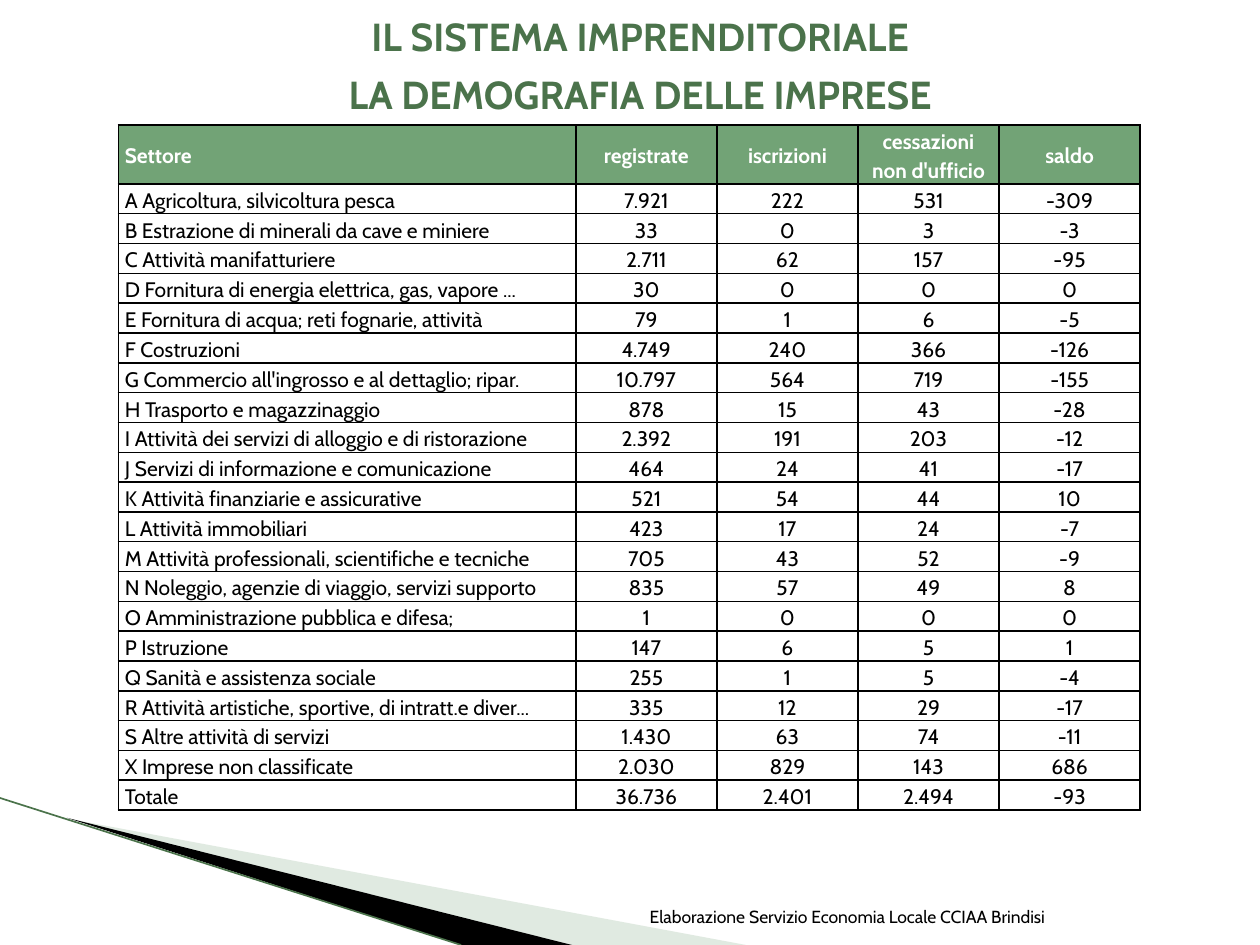
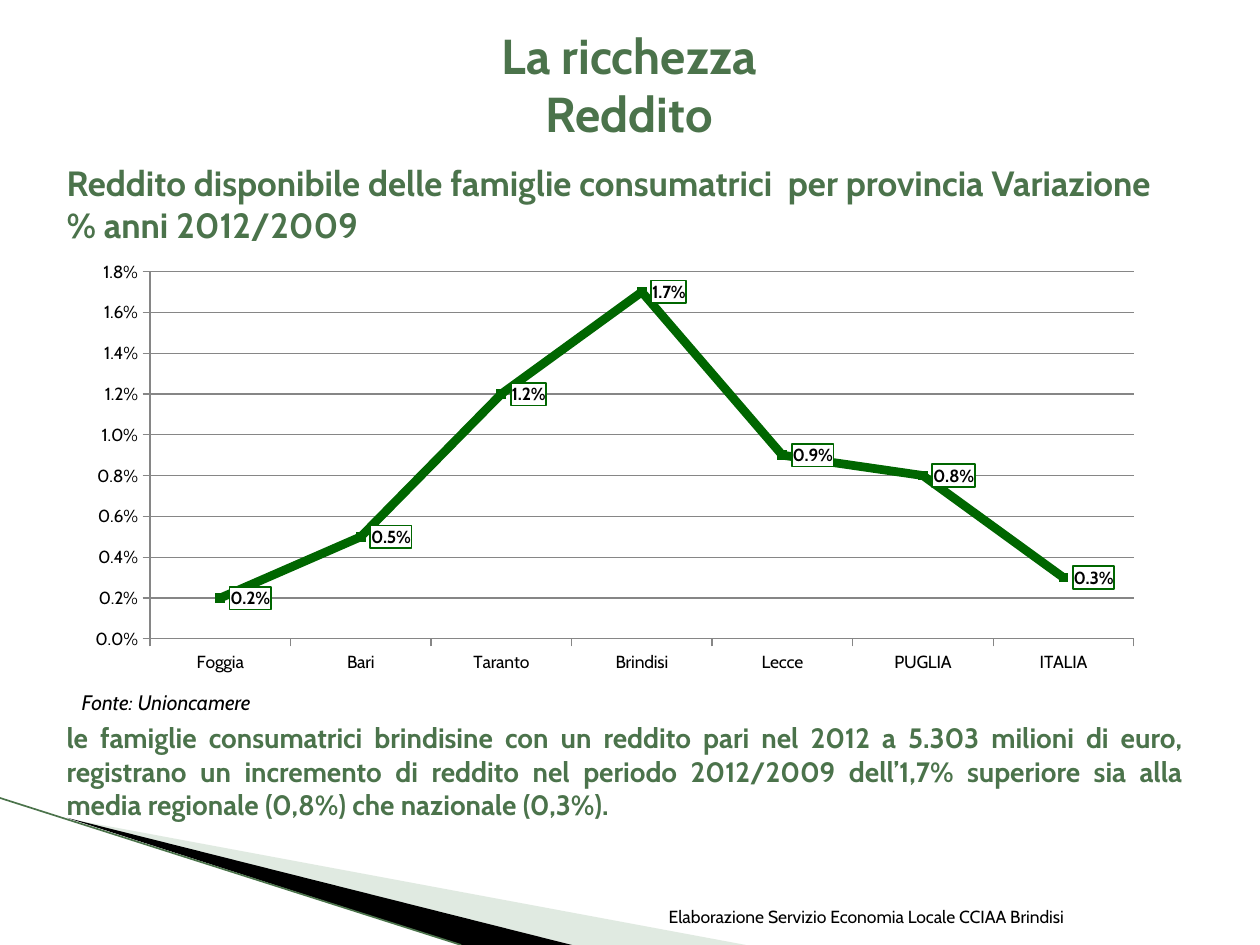
import pptx
import pptx.util
import pptx.chart.data
import pptx.dml.color
import pptx.enum.chart
import pptx.enum.shapes
import pptx.enum.text
import pptx.oxml
import pptx.oxml.ns

Inches = pptx.util.Inches
Pt = pptx.util.Pt
RGBColor = pptx.dml.color.RGBColor
ALIGN = pptx.enum.text.PP_ALIGN
ANCHOR = pptx.enum.text.MSO_ANCHOR

FONT = "Cabin"
GREEN = RGBColor(0x4B, 0x73, 0x4B)
HEAD = RGBColor(0x72, 0xA3, 0x76)
PALE = RGBColor(0xB3, 0xCB, 0xB5)
DEEP = RGBColor(0x00, 0x66, 0x00)
GRAY = RGBColor(0x86, 0x86, 0x86)
BLACK = RGBColor(0, 0, 0)
WHITE = RGBColor(255, 255, 255)

FOOTER = "Elaborazione Servizio Economia Locale CCIAA Brindisi"
FIRMS = "il sistema imprenditoriale\vla demografia delle imprese"
WEALTH = "La ricchezza\vReddito"
INCOME = ("Reddito disponibile delle famiglie consumatrici  per provincia "
          "Variazione % anni 2012/2009")
SOURCE = "Fonte: Unioncamere"
REMARK = ("le famiglie consumatrici brindisine con un reddito pari nel 2012 a 5.303 "
          "milioni di euro, registrano un incremento di reddito nel periodo 2012/2009 "
          "dell’1,7% superiore sia alla media regionale (0,8%) che nazionale (0,3%).")

SECTORS = [
    ("Settore", "registrate", "iscrizioni", "cessazioni non d'ufficio", "saldo"),
    ("A Agricoltura, silvicoltura pesca", "7.921", "222", "531", "-309"),
    ("B Estrazione di minerali da cave e miniere", "33", "0", "3", "-3"),
    ("C Attività manifatturiere", "2.711", "62", "157", "-95"),
    ("D Fornitura di energia elettrica, gas, vapore ...", "30", "0", "0", "0"),
    ("E Fornitura di acqua; reti fognarie, attività", "79", "1", "6", "-5"),
    ("F Costruzioni", "4.749", "240", "366", "-126"),
    ("G Commercio all'ingrosso e al dettaglio; ripar.", "10.797", "564", "719", "-155"),
    ("H Trasporto e magazzinaggio", "878", "15", "43", "-28"),
    ("I Attività dei servizi di alloggio e di ristorazione", "2.392", "191", "203", "-12"),
    ("J Servizi di informazione e comunicazione", "464", "24", "41", "-17"),
    ("K Attività finanziarie e assicurative", "521", "54", "44", "10"),
    ("L Attività immobiliari", "423", "17", "24", "-7"),
    ("M Attività professionali, scientifiche e tecniche", "705", "43", "52", "-9"),
    ("N Noleggio, agenzie di viaggio, servizi supporto", "835", "57", "49", "8"),
    ("O Amministrazione pubblica e difesa;", "1", "0", "0", "0"),
    ("P Istruzione", "147", "6", "5", "1"),
    ("Q Sanità e assistenza sociale", "255", "1", "5", "-4"),
    ("R Attività artistiche, sportive, di intratt.e diver...", "335", "12", "29", "-17"),
    ("S Altre attività di servizi", "1.430", "63", "74", "-11"),
    ("X Imprese non classificate", "2.030", "829", "143", "686"),
    ("Totale", "36.736", "2.401", "2.494", "-93"),
]
CHANGE = {"Foggia": 0.002, "Bari": 0.005, "Taranto": 0.012, "Brindisi": 0.017,
          "Lecce": 0.009, "PUGLIA": 0.008, "ITALIA": 0.003}

WEDGES = [
    (PALE, 40, [(0.55, 6.5), (5.92, 7.5), (4.54, 7.5)]),
    (BLACK, 100, [(0.53, 6.49), (4.54, 7.5), (3.66, 7.5)]),
]


def xml(text):
    return pptx.oxml.parse_xml(text.replace(">", " " + pptx.oxml.ns.nsdecls("a", "c") + ">", 1))


def write(frame, text, size=12, color=BLACK, bold=False, italic=False,
          align=ALIGN.LEFT, space=None, small=False):
    frame.word_wrap = True
    par = frame.paragraphs[0]
    par.text = text
    par.alignment = align
    par.line_spacing = space
    for run in par.runs:
        font = run.font
        font.name, font.size, font.color.rgb = FONT, Pt(size), color
        font.bold, font.italic = bold, italic
        if small:
            font._element.set("cap", "small")


def label(slide, text, box, anchor=ANCHOR.TOP, **style):
    frame = slide.shapes.add_textbox(*map(Inches, box)).text_frame
    frame.vertical_anchor = anchor
    write(frame, text, **style)


def paint(shape, color):
    shape.shadow.inherit = False
    shape.line.fill.background()
    shape.fill.solid()
    shape.fill.fore_color.rgb = color


def page(deck, title, box, foot, **style):
    slide = deck.slides.add_slide(deck.slide_layouts[6])
    for color, alpha, points in WEDGES:
        spots = [(Inches(x), Inches(y)) for x, y in points]
        pen = slide.shapes.build_freeform(*spots[0])
        pen.add_line_segments(spots[1:], close=True)
        wedge = pen.convert_to_shape()
        paint(wedge, color)
        tint = wedge._element.spPr.find(".//" + pptx.oxml.ns.qn("a:srgbClr"))
        tint.append(xml(f'<a:alpha val="{alpha * 1000}"></a:alpha>'))
    edge = slide.shapes.add_connector(
        pptx.enum.shapes.MSO_CONNECTOR.STRAIGHT,
        *map(Inches, (-0.01, 6.33, 3.66, 7.5)))
    edge.line.color.rgb, edge.line.width = GREEN, Pt(0.95)
    edge._element.spPr.append(xml("<a:effectLst></a:effectLst>"))
    head = slide.shapes.add_shape(
        pptx.enum.shapes.MSO_SHAPE.RECTANGLE, *map(Inches, box))
    paint(head, WHITE)
    head.text_frame.vertical_anchor = ANCHOR.MIDDLE
    write(head.text_frame, title, color=GREEN, bold=True, align=ALIGN.CENTER, **style)
    label(slide, FOOTER, (4.79, 7.01, foot, 0.4), anchor=ANCHOR.BOTTOM,
          size=10, align=ALIGN.RIGHT)
    return slide


def border(cell):
    props = cell._tc.get_or_add_tcPr()
    for spot, side in enumerate("LRTB"):
        props.insert(spot, xml(
            f'<a:ln{side} w="12700"><a:solidFill><a:srgbClr val="{BLACK}"/>'
            f'</a:solidFill></a:ln{side}>'))


def fill_table(slide):
    wide, head, width, full = 3.63, 0.47, 8.11, 5.44
    count = len(SECTORS[0])
    table = slide.shapes.add_table(
        len(SECTORS), count, *map(Inches, (0.94, 0.99, width, full))).table
    for col, item in enumerate(table.columns):
        item.width = Inches(wide if col == 0 else (width - wide) / (count - 1))
    for row, values in enumerate(SECTORS):
        top = row == 0
        table.rows[row].height = Inches(head if top else (full - head) / (len(SECTORS) - 1))
        for col, value in enumerate(values):
            cell = table.cell(row, col)
            cell.margin_left = cell.margin_right = Inches(0.05)
            cell.margin_top = cell.margin_bottom = 0
            cell.vertical_anchor = ANCHOR.MIDDLE
            cell.fill.solid()
            cell.fill.fore_color.rgb = HEAD if top else WHITE
            border(cell)
            write(cell.text_frame, value, color=WHITE if top else BLACK, bold=top,
                  align=ALIGN.CENTER if col else ALIGN.LEFT, space=1.15)


def draw_chart(slide):
    kinds = pptx.enum.chart
    data = pptx.chart.data.CategoryChartData(number_format="0.0%")
    data.categories = list(CHANGE)
    data.add_series("Series 1", list(CHANGE.values()))
    chart = slide.shapes.add_chart(
        kinds.XL_CHART_TYPE.LINE_MARKERS,
        *map(Inches, (0.59, 2.02, 8.58, 3.39)), data).chart
    chart.has_legend = chart.has_title = False
    chart.font.name, chart.font.size, chart.font.color.rgb = FONT, Pt(10), BLACK

    axis = chart.value_axis
    axis.minimum_scale, axis.maximum_scale, axis.major_unit = 0, 0.018, 0.002
    axis.tick_labels.number_format = "0.0%"
    axis.tick_labels.number_format_is_linked = False
    axis.major_gridlines.format.line.color.rgb = GRAY
    for item in (axis, chart.category_axis):
        item.major_tick_mark = kinds.XL_TICK_MARK.OUTSIDE
        item.format.line.color.rgb = GRAY

    plot = chart.plots[0]
    plot.vary_by_categories = False
    line = plot.series[0]
    line.smooth = False
    line.format.line.color.rgb, line.format.line.width = DEEP, Pt(5)
    line.marker.style, line.marker.size = kinds.XL_MARKER_STYLE.SQUARE, 5
    line.marker.format.fill.solid()
    line.marker.format.fill.fore_color.rgb = DEEP
    line.marker.format.line.color.rgb = DEEP

    tags = line.data_labels
    tags.show_value = True
    tags.number_format, tags.number_format_is_linked = "0.0%", False
    tags.position = kinds.XL_LABEL_POSITION.RIGHT
    tags.font.name, tags.font.size, tags.font.bold = FONT, Pt(10), True
    tags.font.color.rgb = BLACK
    tags._element.find(pptx.oxml.ns.qn("c:txPr")).addprevious(xml(
        f'<c:spPr><a:solidFill><a:srgbClr val="{WHITE}"/></a:solidFill>'
        f'<a:ln w="12700"><a:solidFill><a:srgbClr val="{DEEP}"/></a:solidFill></a:ln></c:spPr>'))

    area = chart._chartSpace.chart.plotArea
    for old in area.findall(pptx.oxml.ns.qn("c:layout")):
        area.remove(old)
    parts = "".join(f'<c:{name} val="{value}"/>' for name, value in (
        ("layoutTarget", "inner"), ("xMode", "edge"), ("yMode", "edge"),
        ("x", 0.07), ("y", 0.04), ("w", 0.91), ("h", 0.86)))
    area.insert(0, xml(f"<c:layout><c:manualLayout>{parts}</c:manualLayout></c:layout>"))


def main():
    deck = pptx.Presentation()
    deck.slide_width, deck.slide_height = Inches(10), Inches(7.5)

    firms = page(deck, FIRMS, (1.22, 0.13, 7.72, 0.71), 3.6, size=27.9, small=True)
    fill_table(firms)

    wealth = page(deck, WEALTH, (0.43, 0.29, 9.13, 0.75), 3.75, size=28)
    label(wealth, INCOME, (0.43, 1.23, 9.06, 0.8), size=20, color=GREEN, bold=True)
    draw_chart(wealth)
    label(wealth, SOURCE, (0.55, 5.42, 3, 0.3), italic=True)
    label(wealth, REMARK, (0.43, 5.67, 9.06, 0.9), size=16, color=GREEN,
          bold=True, align=ALIGN.JUSTIFY)
    deck.save("out.pptx")


if __name__ == "__main__":
    main()
